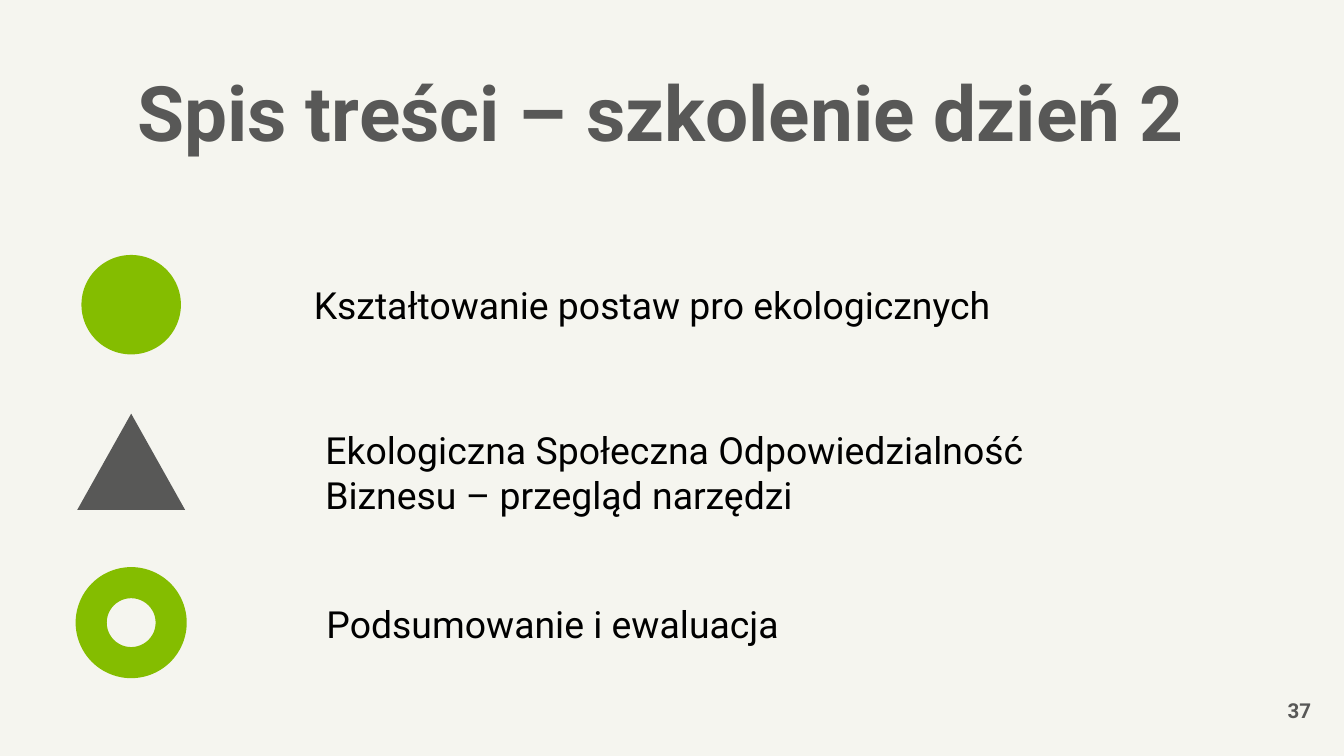
from dataclasses import dataclass

from pptx import Presentation
from pptx.dml.color import RGBColor
from pptx.enum.shapes import MSO_SHAPE
from pptx.enum.text import MSO_ANCHOR, PP_ALIGN
from pptx.shapes.autoshape import Shape
from pptx.slide import Slide
from pptx.util import Cm, Pt


@dataclass(frozen=True)
class Theme:
    font: str = "Roboto"
    background: RGBColor = RGBColor(0xF5, 0xF5, 0xEF)
    green: RGBColor = RGBColor(0x84, 0xBD, 0x00)
    gray: RGBColor = RGBColor(0x58, 0x58, 0x57)
    black: RGBColor = RGBColor(0, 0, 0)
    title_size: int = 41
    item_size: int = 20
    number_size: int = 11


@dataclass(frozen=True)
class Box:
    left: float
    top: float
    width: float
    height: float

    def lengths(self) -> tuple[Cm, Cm, Cm, Cm]:
        return Cm(self.left), Cm(self.top), Cm(self.width), Cm(self.height)


@dataclass(frozen=True)
class AgendaItem:
    text: str
    text_box: Box
    marker: MSO_SHAPE
    marker_width: float
    marker_height: float
    marker_top: float
    color: RGBColor
    alignment: PP_ALIGN = PP_ALIGN.LEFT
    right_margin: float = 0.25


THEME = Theme()
MARKER_CENTER = 2.48
RING_THICKNESS = 0.28

ITEMS = (
    AgendaItem("Kształtowanie postaw pro ekologicznych", Box(5, 5.2, 15.01, 1.11),
               MSO_SHAPE.OVAL, 1.88, 1.88, 4.82, THEME.green, PP_ALIGN.CENTER, 0.6),
    AgendaItem("Ekologiczna Społeczna Odpowiedzialność Biznesu – przegląd narzędzi",
               Box(5.9, 7.95, 15.6, 1.96),
               MSO_SHAPE.ISOSCELES_TRIANGLE, 2.04, 1.82, 7.82, THEME.gray),
    AgendaItem("Podsumowanie i ewaluacja", Box(5.92, 11.23, 17.15, 1.11),
               MSO_SHAPE.DONUT, 2.1, 2.1, 10.72, THEME.green),
)


def write_text(shape: Shape, text: str, *, size: int, color: RGBColor,
               bold: bool = False, alignment: PP_ALIGN = PP_ALIGN.LEFT,
               anchor: MSO_ANCHOR = MSO_ANCHOR.TOP, line_spacing: float = 1.0,
               margins: tuple[float, float, float, float] = (0, 0, 0, 0)) -> None:
    frame = shape.text_frame
    frame.word_wrap = True
    frame.vertical_anchor = anchor
    (frame.margin_left, frame.margin_top,
     frame.margin_right, frame.margin_bottom) = map(Cm, margins)
    paragraph = frame.paragraphs[0]
    paragraph.alignment = alignment
    paragraph.line_spacing = line_spacing
    paragraph.space_before = Pt(0)
    run = paragraph.add_run()
    run.text = text
    run.font.name = THEME.font
    run.font.size = Pt(size)
    run.font.bold = bold
    run.font.color.rgb = color


def add_title(slide: Slide, text: str, box: Box) -> None:
    title = slide.shapes.title
    title.left, title.top, title.width, title.height = box.lengths()
    write_text(title, text, size=THEME.title_size, color=THEME.gray, bold=True,
               alignment=PP_ALIGN.CENTER, line_spacing=0.9)


def add_agenda_item(slide: Slide, item: AgendaItem) -> None:
    marker_box = Box(MARKER_CENTER - item.marker_width / 2, item.marker_top,
                     item.marker_width, item.marker_height)
    marker = slide.shapes.add_shape(item.marker, *marker_box.lengths())
    marker.shadow.inherit = False
    marker.fill.solid()
    marker.fill.fore_color.rgb = item.color
    marker.line.fill.background()
    if item.marker == MSO_SHAPE.DONUT:
        marker.adjustments[0] = RING_THICKNESS
    label = slide.shapes.add_textbox(*item.text_box.lengths())
    write_text(label, item.text, size=THEME.item_size, color=THEME.black,
               alignment=item.alignment, margins=(0.25, 0.13, item.right_margin, 0.13))


def add_page_number(slide: Slide, number: str, box: Box) -> None:
    label = slide.shapes.add_textbox(*box.lengths())
    write_text(label, number, size=THEME.number_size, color=THEME.gray, bold=True,
               alignment=PP_ALIGN.RIGHT, anchor=MSO_ANCHOR.MIDDLE)


def main() -> None:
    presentation = Presentation()
    presentation.slide_width = Cm(25.4)
    presentation.slide_height = Cm(14.29)
    slide = presentation.slides.add_slide(presentation.slide_layouts.get_by_name("Title Only"))
    slide.background.fill.solid()
    slide.background.fill.fore_color.rgb = THEME.background
    add_title(slide, "Spis treści – szkolenie dzień 2", Box(1.42, 1.42, 22.15, 2))
    for item in ITEMS:
        add_agenda_item(slide, item)
    add_page_number(slide, "37", Box(23.26, 13.18, 1.52, 0.51))
    presentation.save("out.pptx")


if __name__ == "__main__":
    main()
